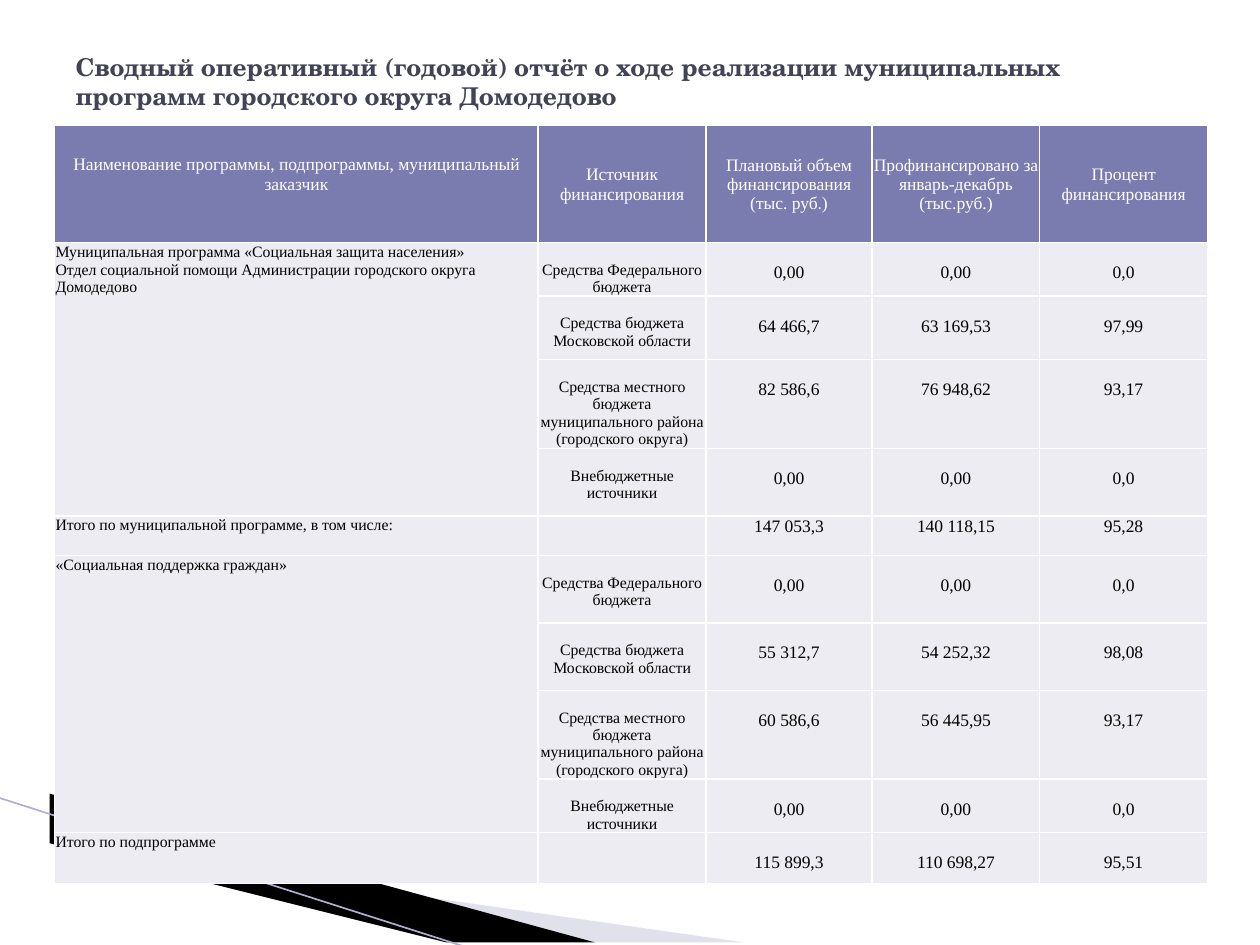
import pptx
import pptx.dml.color
import pptx.enum.shapes
import pptx.enum.text
import pptx.oxml
import pptx.oxml.ns
import pptx.util
from lxml import etree

Cm = pptx.util.Cm
Pt = pptx.util.Pt
RGBColor = pptx.dml.color.RGBColor
Align = pptx.enum.text.PP_ALIGN
Anchor = pptx.enum.text.MSO_ANCHOR
qn = pptx.oxml.ns.qn

WHITE = RGBColor(0xFF, 0xFF, 0xFF)
BLACK = RGBColor(0x00, 0x00, 0x00)
SLATE = RGBColor(0x42, 0x44, 0x56)
HEADER_FILL = RGBColor(0x7A, 0x7B, 0xAE)
BODY_FILL = RGBColor(0xEC, 0xEC, 0xF2)
LILAC = RGBColor(0xB6, 0xB6, 0xD1)
LILAC_LINE = RGBColor(0xAF, 0xB0, 0xCC)

TITLE = ("Сводный оперативный (годовой) отчёт о ходе реализации муниципальных "
         "программ городского округа Домодедово")
HEADINGS = [
    "Наименование программы, подпрограммы, муниципальный заказчик",
    "Источник финансирования",
    "Плановый объем финансирования (тыс. руб.)",
    "Профинансировано за январь-декабрь (тыс.руб.)",
    "Процент финансирования",
]
SOURCES = [
    "Средства Федерального бюджета",
    "Средства бюджета Московской области",
    "Средства местного бюджета муниципального района (городского округа)",
    "Внебюджетные источники",
]
NO_FUNDS = ["0,00", "0,00", "0,0"]
# name lines, amounts by source, total label, totals, whether totals sit a line lower
PROGRAMS = [
    (["Муниципальная программа «Социальная защита населения»",
      "Отдел социальной помощи Администрации городского округа Домодедово"],
     [NO_FUNDS, ["64 466,7", "63 169,53", "97,99"],
      ["82 586,6", "76 948,62", "93,17"], NO_FUNDS],
     "Итого по муниципальной программе, в том числе:",
     ["147 053,3", "140 118,15", "95,28"], False),
    (["«Социальная поддержка граждан»"],
     [NO_FUNDS, ["55 312,7", "54 252,32", "98,08"],
      ["60 586,6", "56 445,95", "93,17"], NO_FUNDS],
     "Итого по подпрограмме",
     ["115 899,3", "110 698,27", "95,51"], True),
]
COLUMN_WIDTHS = [9.75, 3.38, 3.35, 3.38, 3.38]
ROW_HEIGHTS = [2.36, 1.08, 1.28, 1.79, 1.36, 0.76, 1.36, 1.36, 1.79, 1.07, 1.02]


class ReportSlide:
    title_font = "TeX Gyre Schola"
    table_font = "Times New Roman"
    label_size = 9
    number_size = 10
    line_spacing = 1.12
    inset = Cm(0.02)

    def __init__(self, presentation):
        self.slide = presentation.slides.add_slide(presentation.slide_layouts[5])

    def add_text(self, paragraph, text, font, size, color, align, bold=False):
        paragraph.alignment = align
        run = paragraph.add_run()
        run.text = text
        run.font.name = font
        run.font.size = Pt(size)
        run.font.bold = bold
        run.font.color.rgb = color

    def title(self, text, left, top, width, height):
        title = self.slide.shapes.title
        title.left, title.top = Cm(left), Cm(top)
        title.width, title.height = Cm(width), Cm(height)
        frame = title.text_frame
        frame.auto_size = pptx.enum.text.MSO_AUTO_SIZE.NONE
        frame.word_wrap = True
        frame.vertical_anchor = Anchor.MIDDLE
        self.add_text(frame.paragraphs[0], text, self.title_font, 14, SLATE,
                      Align.LEFT, bold=True)

    def wedge(self, points, color, opacity=100):
        builder = self.slide.shapes.build_freeform(*points[0], scale=float(Cm(1)))
        builder.add_line_segments(points[1:], close=True)
        wedge = builder.convert_to_shape()
        wedge.shadow.inherit = False
        wedge.fill.solid()
        wedge.fill.fore_color.rgb = color
        wedge.line.fill.background()
        if opacity < 100:
            tint = wedge._element.spPr.find(".//" + qn("a:srgbClr"))
            etree.SubElement(tint, qn("a:alpha"), val=str(opacity * 1000))

    def line(self, start, end, color, width):
        line = self.slide.shapes.add_connector(
            pptx.enum.shapes.MSO_CONNECTOR.STRAIGHT,
            *map(Cm, start), *map(Cm, end))
        line.line.color.rgb = color
        line.line.width = Pt(width)
        etree.SubElement(line._element.spPr, qn("a:effectLst"))

    def table(self, left, top, widths, heights):
        """Add an empty grid with white borders and plain body fill."""
        table = self.slide.shapes.add_table(
            len(heights), len(widths), Cm(left), Cm(top),
            Cm(sum(widths)), Cm(sum(heights))).table
        table.first_row = table.horz_banding = False
        for column, width in zip(table.columns, widths):
            column.width = Cm(width)
        for row, height in zip(table.rows, heights):
            row.height = Cm(height)
        for cell in table.iter_cells():
            self.borders(cell)
            cell.fill.solid()
            cell.fill.fore_color.rgb = BODY_FILL
            cell.margin_left = cell.margin_right = cell.margin_top = self.inset
            cell.margin_bottom = 0
        return table

    def borders(self, cell):
        properties = cell._tc.get_or_add_tcPr()
        for side in ("a:lnL", "a:lnR", "a:lnT", "a:lnB"):
            border = etree.SubElement(properties, qn(side), w=str(int(Pt(1))))
            fill = etree.SubElement(border, qn("a:solidFill"))
            etree.SubElement(fill, qn("a:srgbClr"), val=str(WHITE))

    def line_height(self, size):
        return Pt(size * self.line_spacing)

    def heading(self, cell, text):
        cell.fill.fore_color.rgb = HEADER_FILL
        cell.vertical_anchor = Anchor.MIDDLE
        self.add_text(cell.text_frame.paragraphs[0], text, self.table_font,
                      self.number_size, WHITE, Align.CENTER)

    def entry(self, cell, lines, size, align=Align.CENTER, lowered=False):
        """Fill a body cell; a lowered entry starts one line further down."""
        if lowered:
            cell.margin_top = self.inset + self.line_height(size)
        frame = cell.text_frame
        for index, text in enumerate(lines):
            paragraph = frame.add_paragraph() if index else frame.paragraphs[0]
            self.add_text(paragraph, text, self.table_font, size, BLACK, align)

    def amounts(self, table, row, values, lowered):
        for column, value in enumerate(values, start=2):
            self.entry(table.cell(row, column), [value], self.number_size,
                       lowered=lowered)


def main():
    presentation = pptx.Presentation()
    presentation.slide_width, presentation.slide_height = Cm(25.4), Cm(19.05)
    report = ReportSlide(presentation)

    report.wedge([(1.4, 16.54), (15.11, 19.08), (11.58, 19.08)], LILAC, opacity=40)
    report.wedge([(1.35, 16.48), (11.61, 19.08), (9.45, 19.1), (1.37, 16.51)], BLACK)
    report.line((-0.03, 16.08), (9.42, 19.1), LILAC_LINE, 0.95)
    report.title(TITLE, 1.27, 0.76, 22.86, 1.75)

    table = report.table(1.1, 2.53, COLUMN_WIDTHS, ROW_HEIGHTS)
    for column, text in enumerate(HEADINGS):
        report.heading(table.cell(0, column), text)
    table.cell(0, 0).margin_bottom = report.line_height(report.number_size)

    row = 1
    for name, funding, total_label, totals, totals_lowered in PROGRAMS:
        total_row = row + len(SOURCES)
        name_cell = table.cell(row, 0)
        name_cell.merge(table.cell(total_row - 1, 0))
        report.entry(name_cell, name, report.label_size, Align.LEFT)
        for source_row, (source, values) in enumerate(zip(SOURCES, funding), row):
            report.entry(table.cell(source_row, 1), [source], report.label_size,
                         lowered=True)
            report.amounts(table, source_row, values, lowered=True)
        report.entry(table.cell(total_row, 0), [total_label], report.label_size,
                     Align.LEFT)
        report.amounts(table, total_row, totals, totals_lowered)
        row = total_row + 1

    presentation.save("out.pptx")


if __name__ == "__main__":
    main()
